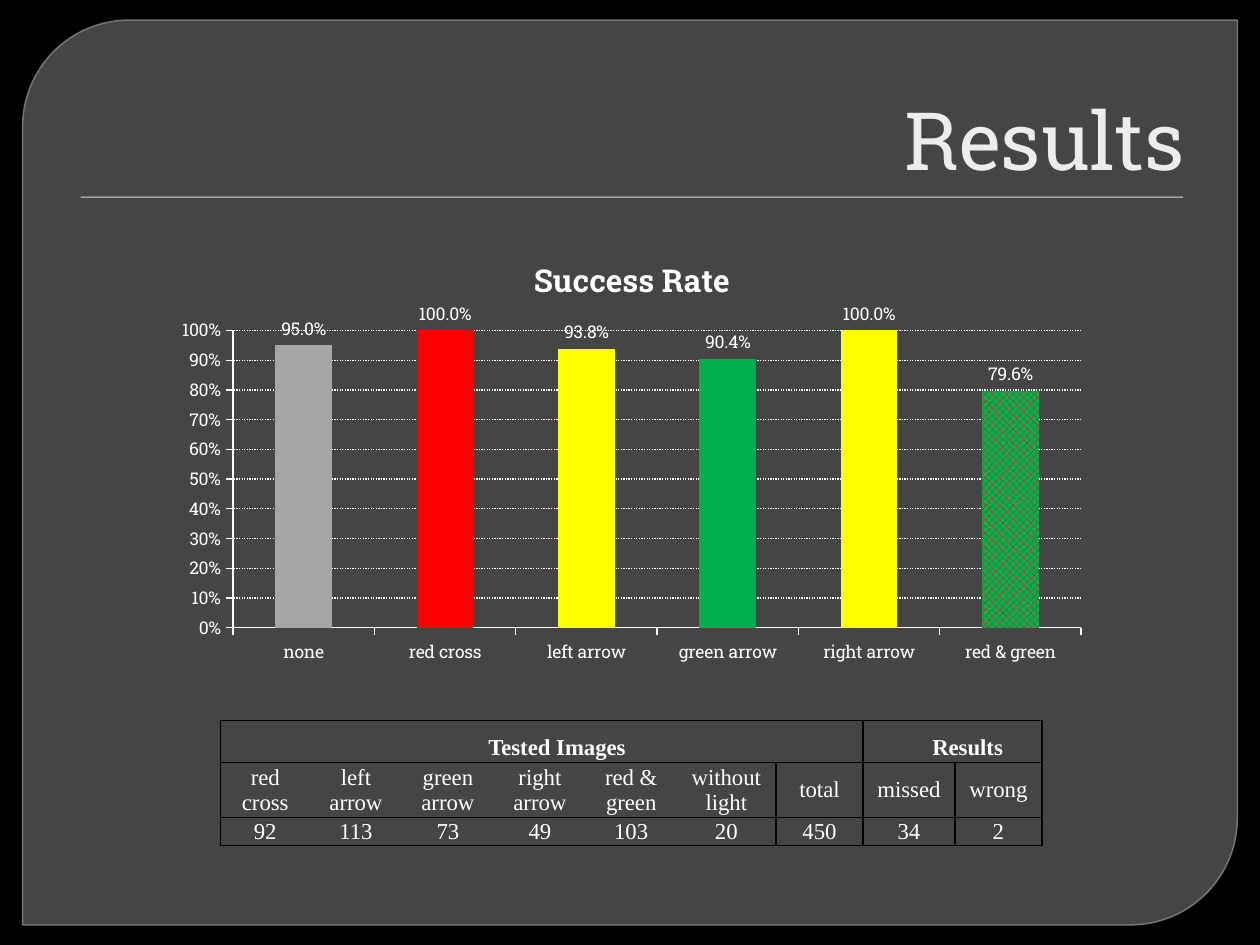
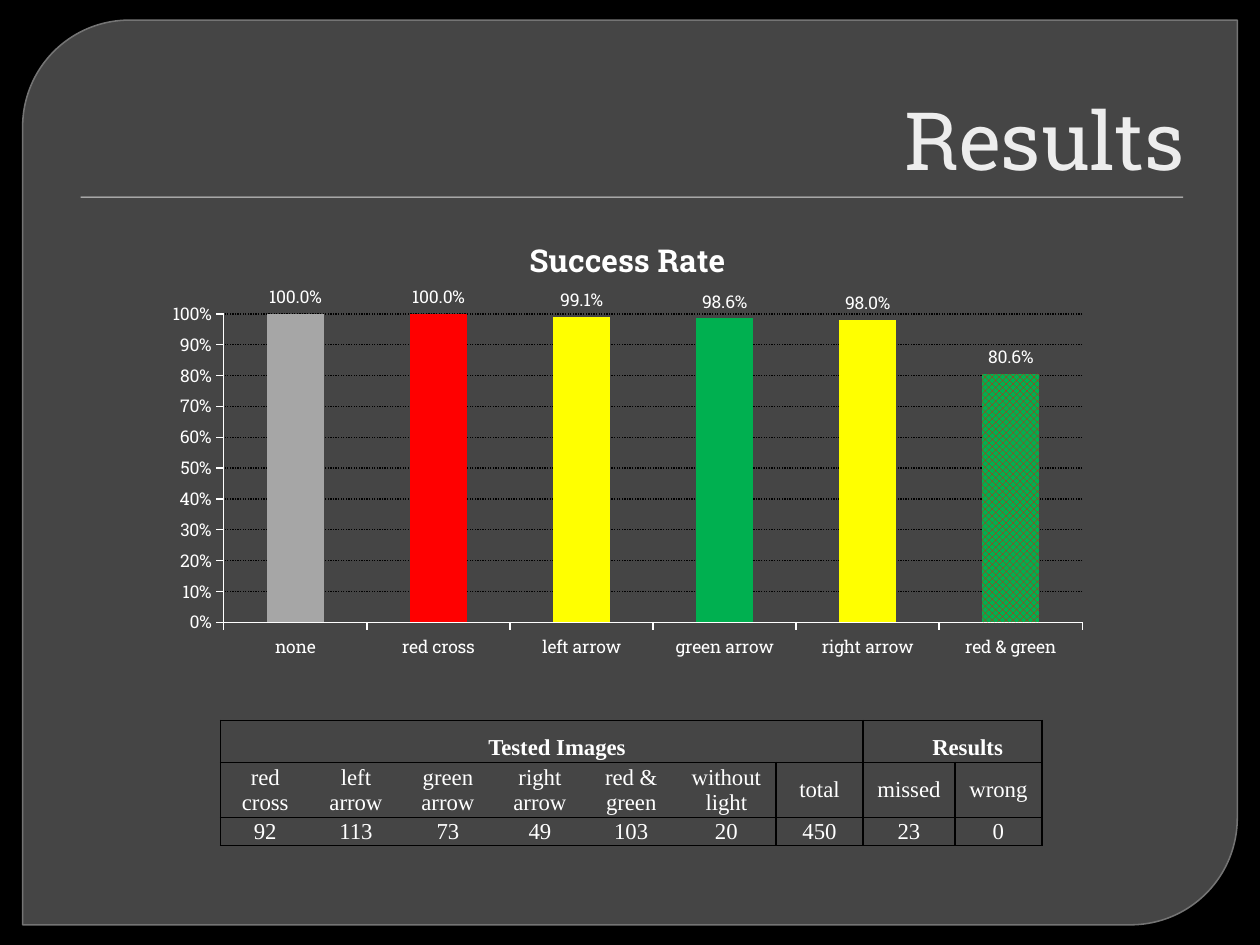
from lxml import etree
from pptx import Presentation
from pptx.chart.data import CategoryChartData
from pptx.dml.color import RGBColor
from pptx.enum.chart import XL_CHART_TYPE, XL_LABEL_POSITION, XL_TICK_MARK
from pptx.enum.dml import MSO_FILL, MSO_LINE, MSO_PATTERN
from pptx.enum.shapes import MSO_SHAPE
from pptx.enum.text import MSO_ANCHOR, MSO_AUTO_SIZE, PP_ALIGN
from pptx.oxml import parse_xml
from pptx.oxml.ns import nsdecls, qn
from pptx.util import Inches, Pt

COLUMNS = XL_CHART_TYPE.COLUMN_CLUSTERED
OUTSIDE_END = XL_LABEL_POSITION.OUTSIDE_END
TICK_OUT = XL_TICK_MARK.OUTSIDE
DOTTED = MSO_LINE.ROUND_DOT
CHECKER = MSO_PATTERN.LARGE_CHECKER_BOARD
DIAGONAL_ROUND = MSO_SHAPE.ROUND_2_DIAG_RECTANGLE
RECTANGLE = MSO_SHAPE.RECTANGLE
CENTER, RIGHT = PP_ALIGN.CENTER, PP_ALIGN.RIGHT

COLORS = {
    "black": "000000", "white": "FFFFFF", "panel": "454545",
    "panel line": "747474", "rule": "DDDDDD", "title": "EDEDED",
    "gray": "A6A6A6", "red": "FF0000", "yellow": "FFFF00", "green": "00B050",
}
COLORS = {name: RGBColor.from_string(value) for name, value in COLORS.items()}
SLAB, TIMES = "Roboto Slab", "Times New Roman"

CATEGORIES = ["none", "red cross", "left arrow", "green arrow", "right arrow", "red & green"]
BAR_COLORS = ["gray", "red", "yellow", "green", "yellow"]
COLUMN_WIDTHS = [0.71, 0.73, 0.73, 0.73, 0.72, 0.79, 0.69, 0.73, 0.69]
ROW_HEIGHTS = [0.33, 0.44, 0.22]
HEADINGS = ["Tested Images", "", "", "", "", "", "", "Results", ""]
LABELS = ["red cross", "left arrow", "green arrow", "right arrow", "red & green",
          "without light", "total", "missed", "wrong"]
COUNTS = ["92", "113", "73", "49", "103", "20", "450"]

RESULTS = [
    {"chart box": (1.3, 1.86, 7.43, 3.47), "grid": "white",
     "rates": [0.95, 1, 0.938, 0.904, 1, 0.796], "errors": ["34", "2"]},
    {"chart box": (1.22, 1.7, 7.52, 3.6), "grid": "black",
     "rates": [1, 1, 0.991, 0.986, 0.98, 0.806], "errors": ["23", "0"]},
]


def write_text(frame, text, font, size, color, bold=False, align=CENTER,
               spacing=None, margin=0, indent=0):
    para = frame.paragraphs[0]
    para.alignment = align
    para.line_spacing = spacing
    properties = para._p.get_or_add_pPr()
    properties.set("marL", str(Inches(margin)))
    properties.set("indent", str(Inches(indent)))
    span = para.add_run()
    span.text = text
    span.font.name = font
    span.font.size = Pt(size)
    span.font.bold = bold
    span.font.color.rgb = COLORS[color]


def set_border(cell, edge, visible):
    line = etree.SubElement(cell._tc.get_or_add_tcPr(), qn(f"a:{edge}"), w=str(Pt(1)))
    if visible:
        fill = etree.SubElement(line, qn("a:solidFill"))
        etree.SubElement(fill, qn("a:srgbClr"), val=str(COLORS["black"]))
    else:
        etree.SubElement(line, qn("a:noFill"))


deck = Presentation()
deck.slide_width, deck.slide_height = Inches(10), Inches(7.5)
layout = deck.slide_layouts[5]
layout.background.fill.solid()
layout.background.fill.fore_color.rgb = COLORS["black"]
pages = [deck.slides.add_slide(layout) for result in RESULTS]

# Panel and title rule, moved to the shared layout
panel = pages[0].shapes.add_shape(
    DIAGONAL_ROUND, Inches(0.18), Inches(0.16), Inches(9.64), Inches(7.18))
panel.adjustments[0], panel.adjustments[1] = 0.118, 0
panel.line.color.rgb = COLORS["panel line"]
panel.line.width = Pt(0.87)
rule = pages[0].shapes.add_shape(
    RECTANGLE, Inches(0.64), Inches(1.56), Inches(8.75), Inches(0.01))
rule.line.fill.background()
for position, (shape, color) in enumerate([(panel, "panel"), (rule, "rule")], start=2):
    shape.shadow.inherit = False
    shape.fill.solid()
    shape.fill.fore_color.rgb = COLORS[color]
    layout.shapes.element.insert(position, shape.element)

for page, result in zip(pages, RESULTS):
    # Title
    title = page.shapes.title
    title.left, title.top = Inches(0.5), Inches(0.28)
    title.width, title.height = Inches(9), Inches(1.25)
    title.text_frame.vertical_anchor = MSO_ANCHOR.BOTTOM
    title.text_frame.auto_size = MSO_AUTO_SIZE.NONE
    write_text(title.text_frame, "Results", SLAB, 46, "title", align=RIGHT, margin=0.06)

    # Table of tested images and errors
    table = page.shapes.add_table(
        3, 9, Inches(1.75), Inches(5.72), Inches(6.5), Inches(0.98)).table
    table.first_row = table.horz_banding = False
    for column, width in zip(table.columns, COLUMN_WIDTHS):
        column.width = Inches(width)
    for row, height in zip(table.rows, ROW_HEIGHTS):
        row.height = Inches(height)
    table.cell(0, 0).merge(table.cell(0, 6))
    table.cell(0, 7).merge(table.cell(0, 8))
    for row, texts in enumerate([HEADINGS, LABELS, COUNTS + result["errors"]]):
        heading = row == 0
        for column, text in enumerate(texts):
            cell = table.cell(row, column)
            cell.margin_left = cell.margin_right = Inches(0.09)
            cell.margin_top = cell.margin_bottom = 0
            cell.vertical_anchor = MSO_ANCHOR.MIDDLE
            set_border(cell, "lnL", heading or column not in range(1, 6))
            set_border(cell, "lnR", heading or column not in range(5))
            set_border(cell, "lnT", True)
            set_border(cell, "lnB", True)
            cell.fill.background()
            if text:
                write_text(cell.text_frame, text, TIMES, 13, "white", bold=heading,
                           spacing=1.5 if heading else None,
                           indent=0.24 if heading else 0)

    # Success rate chart
    data = CategoryChartData()
    data.categories = CATEGORIES
    data.add_series("Success Rate", result["rates"])
    box = [Inches(length) for length in result["chart box"]]
    chart = page.shapes.add_chart(COLUMNS, *box, data).chart
    chart.has_legend = False
    chart.font.name = SLAB
    chart.font.size = Pt(10)
    chart.font.color.rgb = COLORS["white"]
    chart.has_title = True
    write_text(chart.chart_title.text_frame, "Success Rate", SLAB, 18, "white", bold=True)
    chart.chart_title.include_in_layout = False

    # Plot area as fractions of the chart box
    area = chart._chartSpace.chart.plotArea
    for old in area.findall(qn("c:layout")):
        area.remove(old)
    area.insert(0, parse_xml(
        f'<c:layout {nsdecls("c")}><c:manualLayout><c:layoutTarget val="inner"/>'
        '<c:xMode val="edge"/><c:yMode val="edge"/><c:x val="0.074"/><c:y val="0.22"/>'
        '<c:w val="0.906"/><c:h val="0.68"/></c:manualLayout></c:layout>'))

    # Axes and grid
    for axis in (chart.category_axis, chart.value_axis):
        axis.major_tick_mark = TICK_OUT
        axis.format.line.color.rgb = COLORS["white"]
        axis.format.line.width = Pt(0.75)
    rates = chart.value_axis
    rates.minimum_scale, rates.maximum_scale, rates.major_unit = 0, 1, 0.1
    rates.tick_labels.number_format = "0%"
    rates.tick_labels.number_format_is_linked = False
    grid = rates.major_gridlines.format.line
    grid.color.rgb = COLORS[result["grid"]]
    grid.width = Pt(0.75)
    grid.dash_style = DOTTED

    # Bars and their labels
    plot = chart.plots[0]
    plot.vary_by_categories = False
    plot.gap_width = 150
    plot.has_data_labels = True
    plot.data_labels.show_value = True
    plot.data_labels.number_format = "0.0%"
    plot.data_labels.number_format_is_linked = False
    plot.data_labels.position = OUTSIDE_END
    series = plot.series[0]
    series.format.fill.solid()
    series.format.fill.fore_color.rgb = COLORS["rule"]
    for index, color in enumerate(BAR_COLORS):
        fill = series.points[index].format.fill
        fill.solid()
        fill.fore_color.rgb = COLORS[color]
    fill = series.points[len(BAR_COLORS)].format.fill
    fill.patterned()
    fill.pattern = CHECKER
    fill.fore_color.rgb = COLORS["red"]
    fill.back_color.rgb = COLORS["green"]

deck.save("out.pptx")
